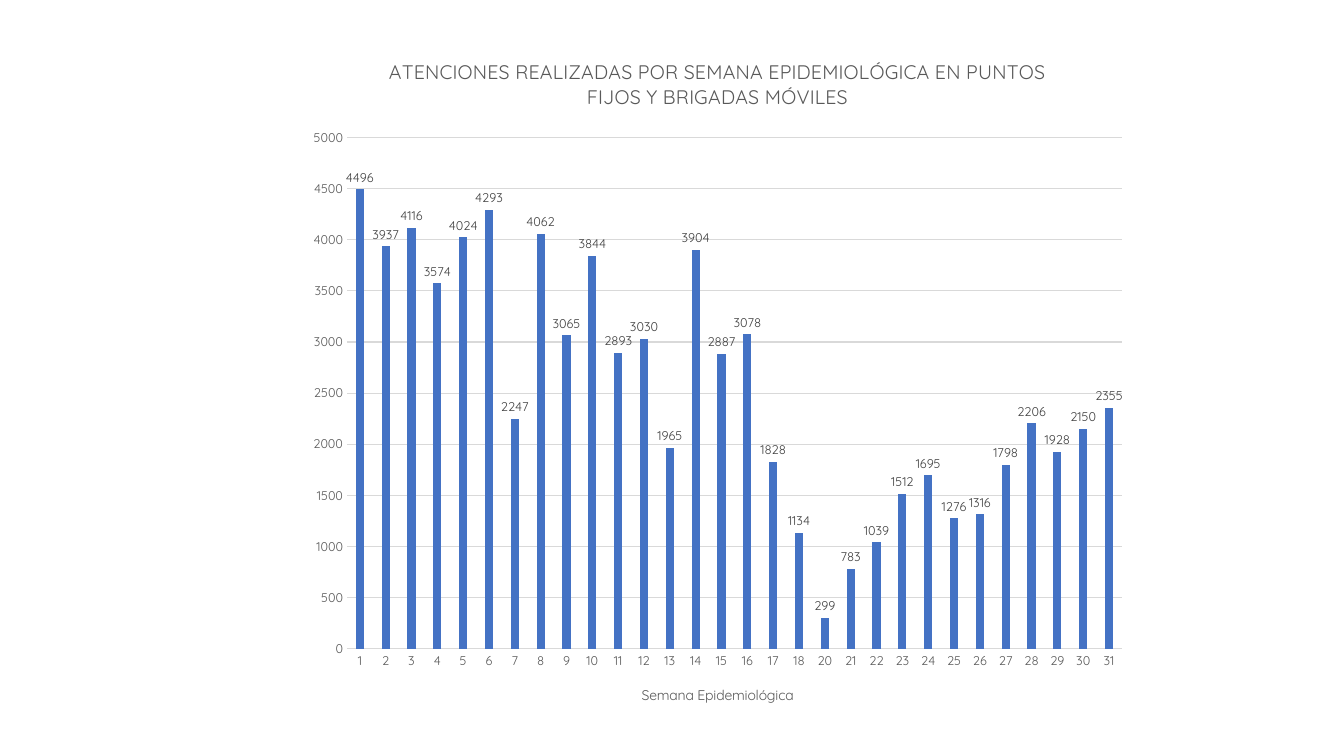
from lxml.etree import SubElement
from pptx import Presentation
from pptx.chart.data import CategoryChartData
from pptx.dml.color import RGBColor
from pptx.enum.chart import XL_CHART_TYPE as ChartType
from pptx.enum.chart import XL_LABEL_POSITION as LabelPosition
from pptx.enum.chart import XL_TICK_MARK as TickMark
from pptx.oxml.ns import qn
from pptx.util import Cm, Pt


def color(code):
    return RGBColor.from_string(code)


def style_font(font, size, code):
    values = {"name": "Quicksand", "size": Pt(size), "bold": False}
    for name, value in values.items():
        setattr(font, name, value)
    font.color.rgb = color(code)


deck = Presentation()
deck.slide_width = Cm(33.87)
deck.slide_height = Cm(19.05)
page = deck.slides.add_slide(deck.slide_layouts[6])

visits = [
    4496, 3937, 4116, 3574, 4024, 4293, 2247, 4062, 3065, 3844,
    2893, 3030, 1965, 3904, 2887, 3078, 1828, 1134, 299, 783,
    1039, 1512, 1695, 1276, 1316, 1798, 2206, 1928, 2150, 2355,
]
weeks = [str(week) for week in range(1, 32) if week != 19]
data = CategoryChartData(number_format="###0")
data.categories = weeks
data.add_series("Series 1", visits)

frame = page.shapes.add_chart(
    ChartType.COLUMN_CLUSTERED, Cm(7.47), Cm(0.86), Cm(21.23), Cm(17.4), data
)
chart = frame.chart
chart.has_legend = False
style_font(chart.font, 10, "000000")

chart.has_title = True
chart.chart_title.include_in_layout = False
week_axis = chart.category_axis
visit_axis = chart.value_axis
titles = [
    (chart.chart_title, 14,
     "ATENCIONES REALIZADAS POR SEMANA EPIDEMIOLÓGICA EN PUNTOS FIJOS Y BRIGADAS MÓVILES"),
    (week_axis.axis_title, 10, "Semana Epidemiológica"),
]
for title, size, wording in titles:
    para = title.text_frame.paragraphs[0]
    span = para.add_run()
    span.text = wording
    style_font(para.font, size, "595959")
    style_font(span.font, size, "595959")

for axis in (week_axis, visit_axis):
    axis.major_tick_mark = TickMark.NONE
    axis.minor_tick_mark = TickMark.NONE
    style_font(axis.tick_labels.font, 9, "595959")

visit_format = {
    "minimum_scale": 0,
    "maximum_scale": 5000,
    "major_unit": 500,
    "has_major_gridlines": True,
}
for name, value in visit_format.items():
    setattr(visit_axis, name, value)
visit_axis.tick_labels.number_format = "###0"
visit_axis.tick_labels.number_format_is_linked = False
visit_axis.format.line.fill.background()
for line in (week_axis.format.line, visit_axis.major_gridlines.format.line):
    line.color.rgb = color("D9D9D9")
    line.width = Pt(0.75)

plot = chart.plots[0]
plot.gap_width = 219
plot.overlap = -27
plot.vary_by_categories = False
columns = plot.series[0]
columns.format.fill.solid()
columns.format.fill.fore_color.rgb = color("4472C4")
labels = columns.data_labels
labels.show_value = True
labels.position = LabelPosition.OUTSIDE_END
style_font(labels.font, 9, "404040")

plot_area = chart.element.find(".//" + qn("c:plotArea"))
layout = plot_area.find(qn("c:layout"))
if layout is None:
    layout = SubElement(plot_area, qn("c:layout"))
    plot_area.insert(0, layout)
manual = SubElement(layout, qn("c:manualLayout"))
placement = {
    "layoutTarget": "inner", "xMode": "edge", "yMode": "edge",
    "x": 0.06, "y": 0.15, "w": 0.92, "h": 0.74,
}
for name, value in placement.items():
    SubElement(manual, qn("c:" + name)).set("val", str(value))

deck.save("out.pptx")
